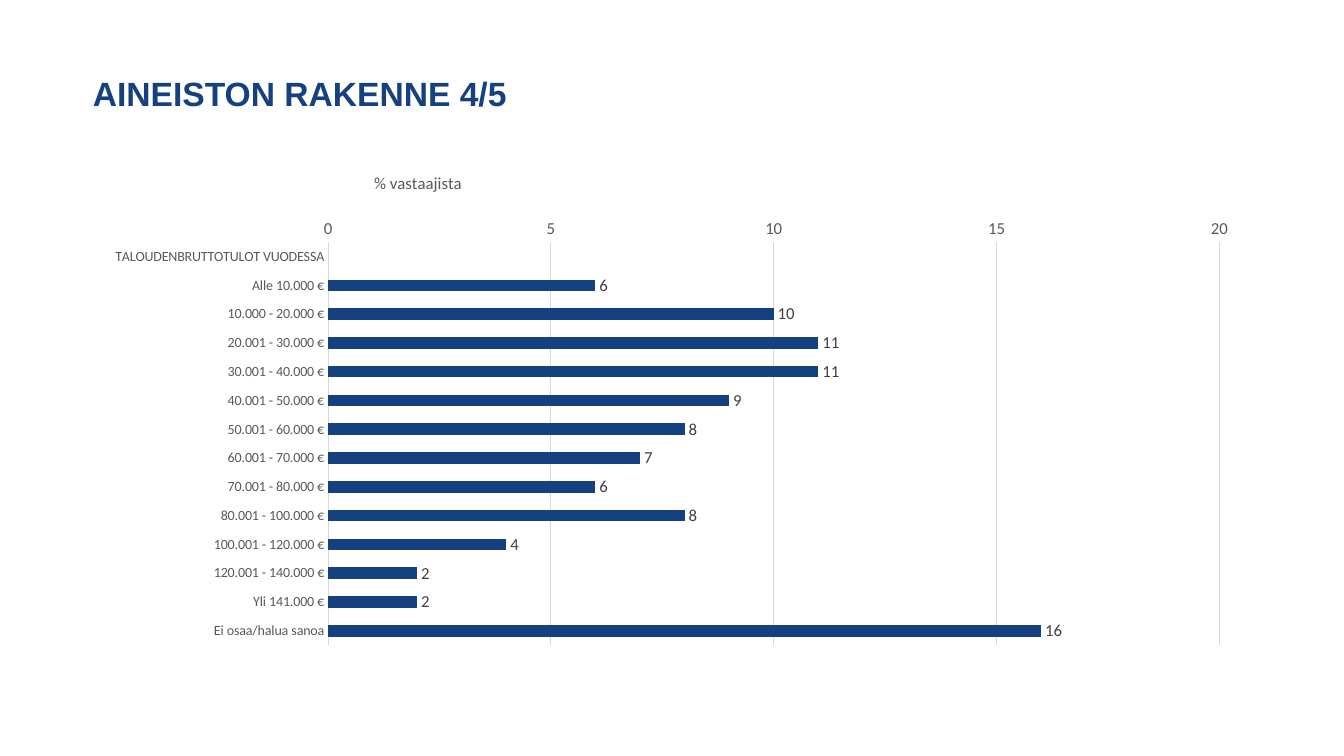
import pptx
import pptx.chart.data
import pptx.dml.color
import pptx.enum.chart
import pptx.enum.text
import pptx.oxml
import pptx.oxml.ns
import pptx.util
from pptx.util import Cm

NAVY, GREY, DARK_GREY, LIGHT_GREY = "164180", "595959", "404040", "D9D9D9"
INCOME_SHARES = {
    "TALOUDENBRUTTOTULOT VUODESSA": None,
    "Alle 10.000 €": 6,
    "10.000 - 20.000 €": 10,
    "20.001 - 30.000 €": 11,
    "30.001 - 40.000 €": 11,
    "40.001 - 50.000 €": 9,
    "50.001 - 60.000 €": 8,
    "60.001 - 70.000 €": 7,
    "70.001 - 80.000 €": 6,
    "80.001 - 100.000 €": 8,
    "100.001 - 120.000 €": 4,
    "120.001 - 140.000 €": 2,
    "Yli 141.000 €": 2,
    "Ei osaa/halua sanoa": 16,
}


def color(value):
    """Return the colour for a hex string."""
    return pptx.dml.color.RGBColor.from_string(value)


def format_font(font, size, fill, name="Calibri", bold=False):
    """Set size, colour, typeface and weight of a font."""
    font.size = pptx.util.Pt(size)
    font.name = name
    font.bold = bold
    font.color.rgb = color(fill)


def format_line(line, fill):
    """Draw a thin line in the given colour."""
    line.color.rgb = color(fill)
    line.width = pptx.util.Pt(0.75)


def add_text(slide, box, text, **font_format):
    """Add a vertically centred text box."""
    frame = slide.shapes.add_textbox(*box).text_frame
    frame.word_wrap = True
    frame.vertical_anchor = pptx.enum.text.MSO_ANCHOR.MIDDLE
    paragraph = frame.paragraphs[0]
    paragraph.line_spacing = 0.9
    run = paragraph.add_run()
    run.text = text
    format_font(run.font, **font_format)


def set_layout(parent, index, target=None, **fractions):
    """Place a chart part by fractions of the chart area."""
    for previous in parent.findall(pptx.oxml.ns.qn("c:layout")):
        parent.remove(previous)
    parts = f'<c:layoutTarget val="{target}"/>' if target else ""
    parts += '<c:xMode val="edge"/><c:yMode val="edge"/>'
    parts += "".join(f'<c:{key} val="{value}"/>' for key, value in fractions.items())
    parent.insert(index, pptx.oxml.parse_xml(
        f'<c:layout {pptx.oxml.ns.nsdecls("c")}><c:manualLayout>{parts}'
        "</c:manualLayout></c:layout>"))


def format_axes(chart):
    """Format the reversed category axis and the value axis."""
    categories, values = chart.category_axis, chart.value_axis
    for axis, size in ((categories, 10), (values, 12)):
        axis.major_tick_mark = pptx.enum.chart.XL_TICK_MARK.NONE
        axis.minor_tick_mark = pptx.enum.chart.XL_TICK_MARK.NONE
        format_font(axis.tick_labels.font, size, GREY)
    categories.reverse_order = True
    format_line(categories.format.line, LIGHT_GREY)
    values.minimum_scale, values.maximum_scale, values.major_unit = 0, 20, 5
    values.tick_labels.number_format = "#,##0"
    values.tick_labels.number_format_is_linked = False
    values.format.line.fill.background()
    format_line(values.major_gridlines.format.line, LIGHT_GREY)


def add_income_chart(slide, box):
    """Add the bar chart of household income shares."""
    data = pptx.chart.data.CategoryChartData()
    data.categories = list(INCOME_SHARES)
    data.add_series("% vastaajista", list(INCOME_SHARES.values()))
    chart_type = pptx.enum.chart.XL_CHART_TYPE.BAR_CLUSTERED
    chart = slide.shapes.add_chart(chart_type, *box, data).chart
    format_font(chart.font, 10, "000000")
    chart.has_legend = False
    format_axes(chart)

    paragraph = chart.chart_title.text_frame.paragraphs[0]
    run = paragraph.add_run()
    run.text = "% vastaajista"
    format_font(run.font, 12, GREY)
    set_layout(chart.chart_title._element, 1, x=0.24, y=0.01)

    plot = chart.plots[0]
    plot.gap_width = 150
    plot.vary_by_categories = False
    series = plot.series[0]
    series.format.fill.solid()
    series.format.fill.fore_color.rgb = color(NAVY)
    labels = series.data_labels
    labels.show_value = True
    labels.position = pptx.enum.chart.XL_LABEL_POSITION.OUTSIDE_END
    format_font(labels.font, 12, DARK_GREY)
    plot_area = chart._chartSpace.chart.plotArea
    set_layout(plot_area, 0, "inner", x=0.203, y=0.16, w=0.769, h=0.819)


def build_slide(slide, left, top, width, height):
    """Place the title and the chart in the given area."""
    add_text(slide, (left, top, width, Cm(2.8)), "AINEISTON RAKENNE 4/5",
             size=24, fill=NAVY, name="Arial", bold=True)
    chart_top = Cm(3.12)
    add_income_chart(slide, (left + Cm(0.25), top + chart_top, width, height - chart_top))


def main():
    """Build and save the presentation."""
    presentation = pptx.Presentation()
    presentation.slide_width, presentation.slide_height = Cm(33.87), Cm(19.05)
    slide = presentation.slides.add_slide(presentation.slide_layouts[6])
    build_slide(slide, Cm(2.09), Cm(1), Cm(29.21), Cm(15.52))
    presentation.save("out.pptx")


if __name__ == "__main__":
    main()
